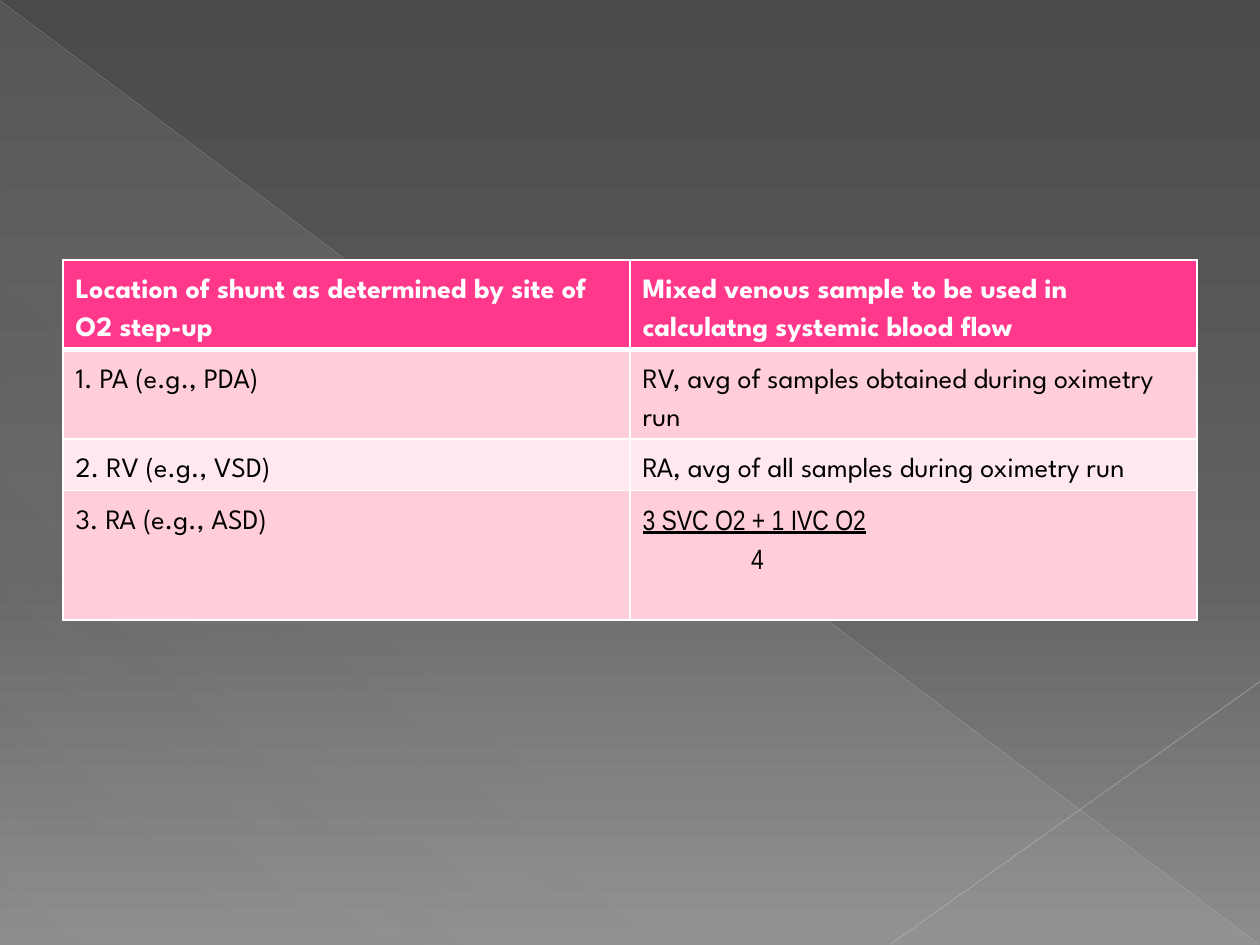
from dataclasses import dataclass

from lxml.etree import SubElement as Sub
from pptx import Presentation
from pptx.dml.color import RGBColor as Rgb
from pptx.enum.shapes import MSO_CONNECTOR as Link, MSO_SHAPE as Shape
from pptx.oxml.ns import qn
from pptx.util import Pt


@dataclass(frozen=True)
class Theme:
    # Gradient stops: position, colour, opacity (all in percent)
    back: tuple = ((0, "4A4A4A", 100), (60, "626262", 100), (100, "8C8C8C", 100))
    sheen: tuple = ((0, "D2D2D2", 10), (70, "D2D2D2", 8), (100, "D2D2D2", 1))
    head: str = "FF388C"
    bands: tuple = ("FFCEDA", "FFE8EE")
    white: str = "FFFFFF"
    black: str = "000000"
    body: str = "League Spartan"
    math: str = "Arial Narrow"
    size: int = 16
    space: float = 1.5


def tint(node, color, alpha=100):
    clr = Sub(node, qn("a:srgbClr"), val=color)
    if alpha < 100:
        Sub(clr, qn("a:alpha"), val=str(alpha * 1000))


class Deck:
    def __init__(self, theme, wide, high):
        self.theme = theme
        self.prs = Presentation()
        self.prs.slide_width, self.prs.slide_height = Pt(wide), Pt(high)
        self.slide = self.prs.slides.add_slide(self.prs.slide_layouts[6])

    def blend(self, fill, root, stops, angle):
        fill.gradient()
        grad = root.find(".//" + qn("a:gradFill"))
        for kid in list(grad):
            grad.remove(kid)
        group = Sub(grad, qn("a:gsLst"))
        for pos, color, alpha in stops:
            tint(Sub(group, qn("a:gs"), pos=str(pos * 1000)), color, alpha)
        Sub(grad, qn("a:lin"), ang=str(angle * 60000), scaled="0")

    def back(self):
        self.blend(self.slide.background.fill, self.slide.element, self.theme.back, 90)

    def sheen(self, x, y, wide, high):
        shape = self.slide.shapes.add_shape(
            Shape.RIGHT_TRIANGLE, Pt(x), Pt(y), Pt(wide), Pt(high))
        shape.shadow.inherit = False
        shape.line.fill.background()
        self.blend(shape.fill, shape.element, self.theme.sheen, 133)

    def line(self, start, end, color, width, alpha):
        link = self.slide.shapes.add_connector(
            Link.STRAIGHT, *(Pt(v) for v in start + end))
        link.line.width = Pt(width)
        link.line.color.rgb = Rgb.from_string(color)
        clr = link.element.spPr.find(".//" + qn("a:srgbClr"))
        Sub(clr, qn("a:alpha"), val=str(alpha * 1000))
        Sub(link.element.spPr, qn("a:effectLst"))

    def edge(self, cell, first, second):
        # The rule under the header is thicker than the others
        widths = dict(L=1, R=1, T=3 if second else 1, B=3 if first else 1)
        props = cell._tc.get_or_add_tcPr()
        for side, width in widths.items():
            rule = Sub(props, qn(f"a:ln{side}"), w=str(Pt(width)))
            tint(Sub(rule, qn("a:solidFill")), self.theme.white)

    def cell(self, cell, text, row):
        t, head = self.theme, row == 0
        self.edge(cell, head, row == 1)
        cell.fill.solid()
        cell.fill.fore_color.rgb = Rgb.from_string(
            t.head if head else t.bands[(row - 1) % 2])
        cell.text = text
        for para in cell.text_frame.paragraphs:
            para.line_spacing = t.space
            font = para.font
            font.name, font.size, font.bold = t.body, Pt(t.size), head
            font.color.rgb = Rgb.from_string(t.white if head else t.black)

    def table(self, x, y, wide, rows, highs):
        cols = len(rows[0])
        grid = self.slide.shapes.add_table(
            len(rows), cols, Pt(x), Pt(y), Pt(wide), Pt(sum(highs))).table
        for r, (texts, high) in enumerate(zip(rows, highs)):
            grid.rows[r].height = Pt(high)
            for c, text in enumerate(texts):
                self.cell(grid.cell(r, c), text, r)
        return grid

    def ratio(self, cell, indent):
        top, low = cell.text_frame.paragraphs
        top.font.underline = True
        low._p.get_or_add_pPr().set("marL", str(Pt(indent)))
        for para in (top, low):
            para.font.name = self.theme.math


ROWS = [
    ("Location of shunt as determined by site of O2 step-up",
     "Mixed venous sample to be used in calculatng systemic blood flow"),
    ("1. PA (e.g., PDA)", "RV, avg of samples obtained during oximetry run"),
    ("2. RV (e.g., VSD)", "RA, avg of all samples during oximetry run"),
    ("3. RA (e.g., ASD)", "3 SVC O2 + 1 IVC O2\n4"),
]


def main():
    deck = Deck(Theme(), 720, 540)

    # Backdrop
    deck.back()
    deck.sheen(0.5, 1.5, 719, 538.5)
    deck.line((0, 0.5), (719.5, 539.5), "BFBFBF", 0.39, 35)
    deck.line((720, 389.5), (509, 539.5), "C6C6C6", 0.47, 45)

    # Shunt table, with the last sample given as a fraction
    grid = deck.table(36, 148.5, 648, ROWS, (51, 51, 29.5, 74))
    deck.ratio(grid.cell(3, 1), 62)

    deck.prs.save("out.pptx")


if __name__ == "__main__":
    main()
